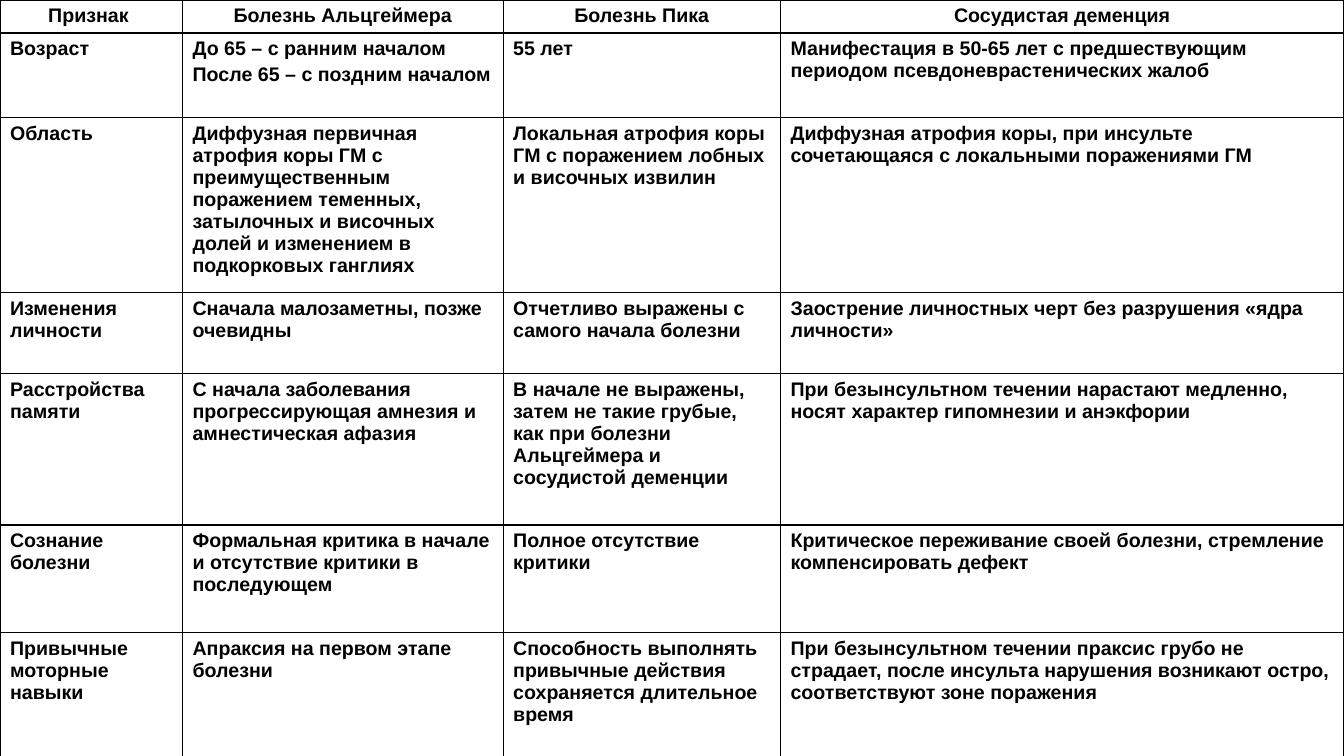
from dataclasses import dataclass

from lxml import etree
from pptx import Presentation
from pptx import util as u
from pptx.dml.color import RGBColor
from pptx.enum import text
from pptx.oxml.ns import qn


@dataclass(frozen=True)
class Theme:
    font: str = "Arial"
    size: int = 14
    ink: str = "000000"
    paper: str = "FFFFFF"
    inner_line: float = 1
    outer_line: float = 2.25


theme = Theme()

COLUMN_WIDTHS = [4.6, 8.08, 6.99, 14.2]
ROW_HEIGHTS = [0.83, 2.14, 4.41, 2.04, 3.81, 2.7, 3.23]
ROWS = [
    ["Признак ", "Болезнь Альцгеймера", "Болезнь Пика", "Сосудистая деменция"],
    [
        "Возраст",
        "До 65 – с ранним началом\nПосле 65 – с поздним началом",
        "55 лет",
        "Манифестация в 50-65 лет с предшествующим периодом "
        "псевдоневрастенических жалоб",
    ],
    [
        "Область",
        "Диффузная первичная атрофия коры ГМ с преимущественным поражением "
        "теменных, затылочных и височных долей и изменением в подкорковых ганглиях",
        "Локальная атрофия коры ГМ с поражением лобных и височных извилин",
        "Диффузная атрофия коры, при инсульте сочетающаяся с локальными "
        "поражениями ГМ",
    ],
    [
        "Изменения личности",
        "Сначала малозаметны, позже очевидны",
        "Отчетливо выражены с самого начала болезни",
        "Заострение личностных черт без разрушения «ядра личности»",
    ],
    [
        "Расстройства памяти",
        "С начала заболевания прогрессирующая амнезия и амнестическая афазия",
        "В начале не выражены, затем не такие грубые, как при болезни "
        "Альцгеймера и сосудистой деменции",
        "При безынсультном течении нарастают медленно, носят характер "
        "гипомнезии и анэкфории",
    ],
    [
        "Сознание болезни",
        "Формальная критика в начале и отсутствие критики в последующем",
        "Полное отсутствие критики",
        "Критическое переживание своей болезни, стремление компенсировать дефект",
    ],
    [
        "Привычные моторные навыки",
        "Апраксия на первом этапе болезни",
        "Способность выполнять привычные действия сохраняется длительное время",
        "При безынсультном течении праксис грубо не страдает, после инсульта "
        "нарушения возникают остро, соответствуют зоне поражения",
    ],
]


def add_borders(cell, outer_sides):
    """Draw all four cell edges, heavier on the table's outer sides."""
    properties = cell._tc.get_or_add_tcPr()
    for side, is_outer in outer_sides.items():
        width = theme.outer_line if is_outer else theme.inner_line
        line = etree.SubElement(properties, qn(f"a:ln{side}"), w=str(u.Pt(width)))
        fill = etree.SubElement(line, qn("a:solidFill"))
        etree.SubElement(fill, qn("a:srgbClr"), val=theme.ink)


deck = Presentation()
deck.slide_width, deck.slide_height = u.Cm(33.87), u.Cm(19.05)
page = deck.slides.add_slide(deck.slide_layouts[6])

table = page.shapes.add_table(
    len(ROWS), len(COLUMN_WIDTHS), 0, 0,
    u.Cm(sum(COLUMN_WIDTHS)), u.Cm(sum(ROW_HEIGHTS)),
).table
table.first_row = table.horz_banding = False
for column, width in zip(table.columns, COLUMN_WIDTHS):
    column.width = u.Cm(width)
for row, height in zip(table.rows, ROW_HEIGHTS):
    row.height = u.Cm(height)

font_format = {"name": theme.font, "size": u.Pt(theme.size), "bold": True}
last_row, last_column = len(ROWS) - 1, len(COLUMN_WIDTHS) - 1

for row_index, row_texts in enumerate(ROWS):
    alignment = text.PP_ALIGN.LEFT if row_index else text.PP_ALIGN.CENTER
    for column_index, wording in enumerate(row_texts):
        cell = table.cell(row_index, column_index)
        add_borders(cell, {
            "L": column_index == 0,
            "R": column_index == last_column,
            "T": row_index == 0,
            "B": row_index == last_row,
        })
        cell.fill.solid()
        cell.fill.fore_color.rgb = RGBColor.from_string(theme.paper)
        cell.text = wording
        for para in cell.text_frame.paragraphs:
            para.alignment = alignment
            para.space_before = u.Pt(theme.size * 0.2)
            for span in para.runs:
                for name, value in font_format.items():
                    setattr(span.font, name, value)
                span.font.color.rgb = RGBColor.from_string(theme.ink)

deck.save("out.pptx")
